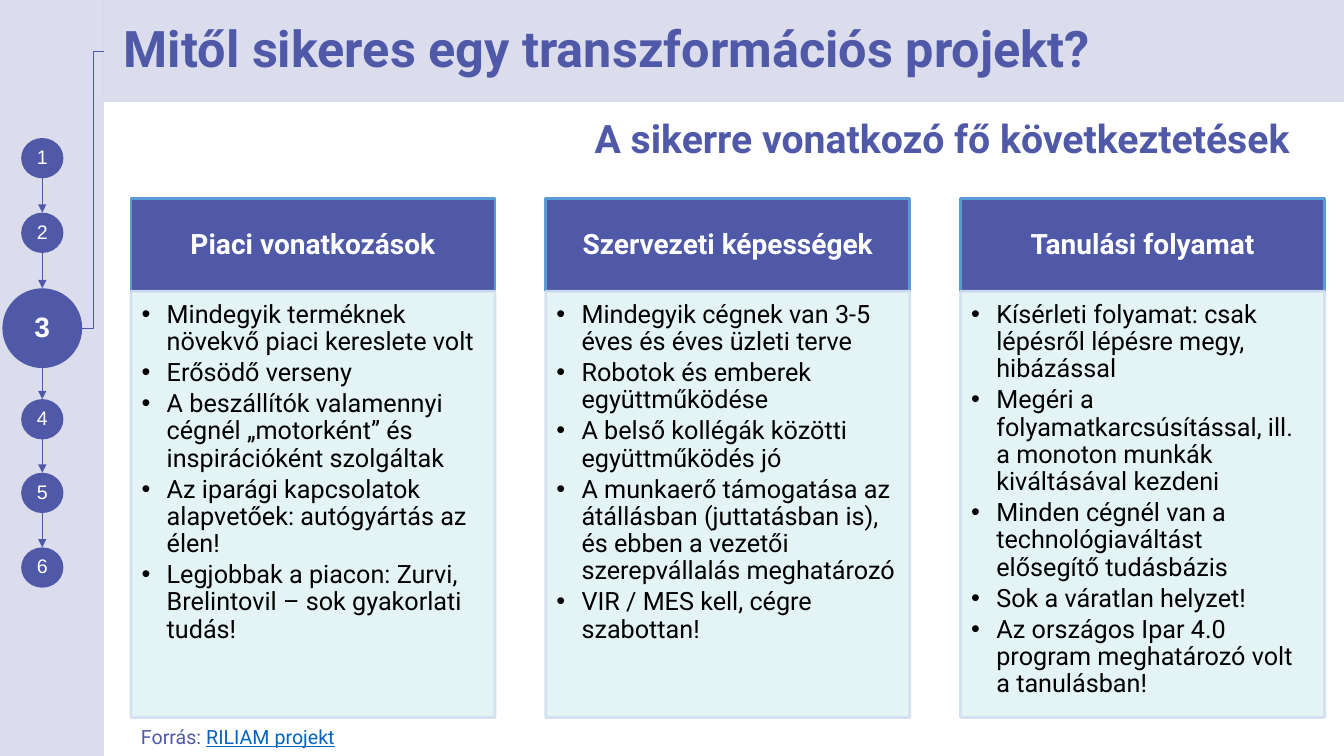
from itertools import pairwise

from lxml.etree import SubElement
from pptx import Presentation
from pptx.dml.color import RGBColor
from pptx.enum.shapes import MSO_CONNECTOR, MSO_SHAPE
from pptx.enum.text import MSO_ANCHOR, PP_ALIGN
from pptx.oxml.ns import qn
from pptx.util import Pt

COLORS = {
    "indigo": "4F59A8",
    "header_edge": "5B9BD5",
    "mint": "CBEBED",
    "body_edge": "D2DEEF",
    "link": "0563C1",
    "white": "FFFFFF",
    "black": "000000",
}
STEP_TOPS = [98.6, 151.9, 205.9, 285.1, 337.7, 391]
CURRENT_STEP = 3
COLUMNS = [
    ("Piaci vonatkozások", [
        "Mindegyik terméknek növekvő piaci kereslete volt",
        "Erősödő verseny",
        "A beszállítók valamennyi cégnél „motorként” és inspirációként szolgáltak",
        "Az iparági kapcsolatok alapvetőek: autógyártás az élen!",
        "Legjobbak a piacon: Zurvi, Brelintovil – sok gyakorlati tudás!",
    ]),
    ("Szervezeti képességek", [
        "Mindegyik cégnek van 3-5 éves és éves üzleti terve",
        "Robotok és emberek együttműködése",
        "A belső kollégák közötti együttműködés jó",
        "A munkaerő támogatása az átállásban (juttatásban is), és ebben a vezetői "
        "szerepvállalás meghatározó",
        "VIR / MES kell, cégre szabottan!",
    ]),
    ("Tanulási folyamat", [
        "Kísérleti folyamat: csak lépésről lépésre megy, hibázással",
        "Megéri a folyamatkarcsúsítással, ill. a monoton munkák kiváltásával kezdeni",
        "Minden cégnél van a technológiaváltást elősegítő tudásbázis",
        "Sok a váratlan helyzet!",
        "Az országos Ipar 4.0 program meghatározó volt a tanulásban!",
    ]),
]


def rgb(name):
    return RGBColor.from_string(COLORS[name])


def set_alpha(paint, percent):
    color = paint._xPr.find(qn("a:solidFill"))[0]
    SubElement(color, qn("a:alpha"), val=str(percent * 1000))


def add_panel(slide, box, fill, alpha=None, edge=None, kind=MSO_SHAPE.RECTANGLE):
    panel = slide.shapes.add_shape(kind, *map(Pt, box))
    panel.shadow.inherit = False
    panel.fill.solid()
    panel.fill.fore_color.rgb = rgb(fill)
    if alpha:
        set_alpha(panel.fill, alpha)
    if edge:
        panel.line.color.rgb = rgb(edge)
        panel.line.width = Pt(2)
    else:
        panel.line.fill.background()
    return panel


def prepare_frame(shape, insets, anchor=MSO_ANCHOR.MIDDLE):
    frame = shape.text_frame
    frame.word_wrap = True
    frame.vertical_anchor = anchor
    (frame.margin_left, frame.margin_top,
     frame.margin_right, frame.margin_bottom) = map(Pt, insets)
    return frame


def style(paragraph, size, color, bold=False, align=PP_ALIGN.LEFT, face="Roboto"):
    paragraph.alignment = align
    paragraph.line_spacing = 0.9
    font = paragraph.font
    font.name, font.size, font.bold = face, Pt(size), bold
    font.color.rgb = rgb(color)


def indent(paragraph, left, first=0):
    properties = paragraph._p.get_or_add_pPr()
    properties.set("marL", str(Pt(left)))
    properties.set("indent", str(Pt(first)))
    return properties


def add_line(slide, kind, start, end, width, arrow=False):
    line = slide.shapes.add_connector(kind, *map(Pt, (*start, *end)))
    line.line.color.rgb = rgb("indigo")
    line.line.width = Pt(width)
    if arrow:
        SubElement(line.line._get_or_add_ln(), qn("a:tailEnd"), type="triangle")
    SubElement(line._element.spPr, qn("a:effectLst"))


def add_sidebar(slide, box):
    left, top, width, height = box
    add_panel(slide, box, "indigo", alpha=20)
    center = left + 30.2
    steps = []
    for number, step_top in enumerate(STEP_TOPS, 1):
        current = number == CURRENT_STEP
        step_width, step_height = (57, 57) if current else (30.2, 28.8)
        step_top += top
        circle = add_panel(slide, (center - step_width / 2, step_top, step_width, step_height),
                           "indigo", kind=MSO_SHAPE.OVAL)
        frame = prepare_frame(circle, (0, 0, 0, 0))
        frame.text = str(number)
        style(frame.paragraphs[0], 20 if current else 14, "white", current,
              PP_ALIGN.CENTER, "Arial")
        steps.append((step_top, step_top + step_height))
        if current:
            add_line(slide, MSO_CONNECTOR.ELBOW,
                     (center + step_width / 2, step_top + step_height / 2),
                     (left + width, top + 36.5), 0.75)
    for (_, bottom), (next_top, _) in pairwise(steps):
        add_line(slide, MSO_CONNECTOR.STRAIGHT, (center, bottom), (center, next_top), 1, True)


def add_title(slide, box):
    frame = prepare_frame(add_panel(slide, box, "indigo", alpha=20), (7.2, 3.6, 7.2, 3.6))
    frame.text = "Mitől sikeres egy transzformációs projekt?"
    indent(frame.paragraphs[0], 7.2)
    style(frame.paragraphs[0], 36, "indigo", True)


def add_subtitle(slide, box):
    frame = prepare_frame(slide.shapes.add_textbox(*map(Pt, box)), (7.2, 3.6, 7.2, 3.6))
    frame.text = "A sikerre vonatkozó fő következtetések"
    style(frame.paragraphs[0], 28, "indigo", True, PP_ALIGN.RIGHT)


def add_column(slide, box, heading, findings):
    left, top, width, height = box
    header_height = 66
    header = add_panel(slide, (left, top, width, header_height), "indigo", edge="header_edge")
    frame = prepare_frame(header, (11.2, 6.4, 11.2, 6.4))
    frame.text = heading
    style(frame.paragraphs[0], 20, "white", True, PP_ALIGN.CENTER)

    body = add_panel(slide, (left, top + header_height, width, height - header_height),
                     "mint", alpha=50, edge="body_edge")
    set_alpha(body.line.fill, 90)
    frame = prepare_frame(body, (7.5, 7.5, 10, 11.2), MSO_ANCHOR.TOP)
    frame.text = "\n".join(findings)
    for finding in frame.paragraphs:
        properties = indent(finding, 18, -18)
        SubElement(properties, qn("a:buFont"), typeface="Arial")
        SubElement(properties, qn("a:buChar"), char="•")
        style(finding, 18, "black")
        finding.space_after = Pt(2.7)


def add_columns(slide, box):
    left, top, width, height = box
    column_width = 260
    pitch = (width - column_width) / (len(COLUMNS) - 1)
    for index, (heading, findings) in enumerate(COLUMNS):
        add_column(slide, (left + index * pitch, top, column_width, height), heading, findings)


def add_source(slide, box):
    frame = prepare_frame(slide.shapes.add_textbox(*map(Pt, box)),
                          (7.2, 3.6, 7.2, 3.6), MSO_ANCHOR.TOP)
    source = frame.paragraphs[0]
    indent(source, 8.6)
    source.font.name, source.font.size = "Roboto", Pt(14)
    source.add_run().text = "Forrás: "
    source.add_run().text = "RILIAM projekt"
    label, project = source.runs
    label.font.color.rgb = rgb("indigo")
    project.font.color.rgb = rgb("link")
    project.font.underline = True


def main():
    presentation = Presentation()
    presentation.slide_width, presentation.slide_height = Pt(960), Pt(540)
    slide = presentation.slides.add_slide(presentation.slide_layouts[6])
    add_sidebar(slide, (0, 0, 74.2, 540))
    add_title(slide, (74.2, 0, 885.8, 72.7))
    add_columns(slide, (93.6, 142, 852.6, 370.5))
    add_subtitle(slide, (85, 68.4, 843, 64.8))
    add_source(slide, (85, 514, 310, 26))
    presentation.save("out.pptx")


if __name__ == "__main__":
    main()
